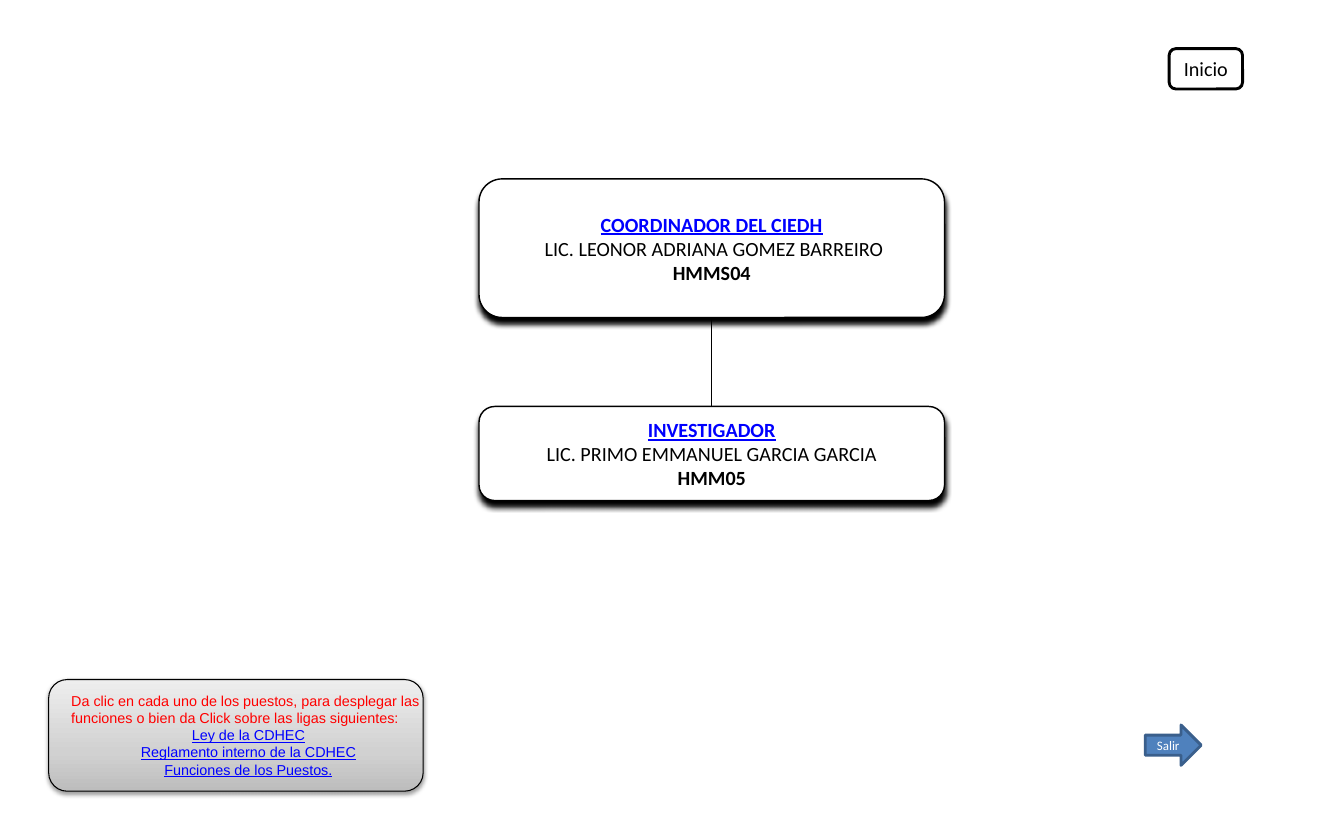
from lxml.etree import SubElement
from pptx import Presentation
from pptx.dml.color import RGBColor
from pptx.enum.shapes import MSO_CONNECTOR, MSO_SHAPE
from pptx.enum.text import MSO_ANCHOR, PP_ALIGN
from pptx.oxml.ns import qn
from pptx.util import Inches, Pt

BLACK, WHITE, RED, LINK = "000000", "FFFFFF", "FF0000", "0000FF"
BLUE, DARK_BLUE = "4F81BD", "3A5F8C"
GRAY_STOPS = [(0, "BDBDBD"), (35, "D1D1D1"), (100, "EEEEEE")]


def color(value):
    return RGBColor.from_string(value)


def add_box(page, kind, box, fill, line, width):
    shape = page.shapes.add_shape(kind, *(Inches(length) for length in box))
    shape.shadow.inherit = False
    shape.fill.solid()
    shape.fill.fore_color.rgb = color(fill)
    shape.line.color.rgb = color(line)
    shape.line.width = Pt(width)
    return shape


def add_shadow(shape, opacity, blur, distance):
    effects = shape.element.spPr.find(qn("a:effectLst"))
    shadow = SubElement(effects, qn("a:outerShdw"), blurRad=str(Pt(blur)),
                        dist=str(Pt(distance)), dir="5400000", rotWithShape="0")
    tone = SubElement(shadow, qn("a:srgbClr"), val=BLACK)
    SubElement(tone, qn("a:alpha"), val=str(opacity * 1000))


def fill_gradient(shape, stops):
    shape.fill.gradient()
    shape.fill.gradient_angle = 90
    stop_list = shape.element.spPr.find(qn("a:gradFill")).find(qn("a:gsLst"))
    for old_stop in list(stop_list):
        stop_list.remove(old_stop)
    for position, tone in stops:
        stop = SubElement(stop_list, qn("a:gs"), pos=str(position * 1000))
        SubElement(stop, qn("a:srgbClr"), val=tone)


def write_lines(frame, lines, font, size):
    """Each line is (text, colour, bold, underlined, alignment)."""
    for index, (text, tone, bold, underline, align) in enumerate(lines):
        para = frame.paragraphs[0] if index == 0 else frame.add_paragraph()
        para.text = text
        para.alignment = align
        para.font.name = font
        para.font.size = Pt(size)
        para.font.bold = bold
        para.font.underline = underline
        para.font.color.rgb = color(tone)


def add_position(page, box, title, person, code):
    card = add_box(page, MSO_SHAPE.ROUNDED_RECTANGLE, box, WHITE, BLACK, 1)
    add_shadow(card, 100, 4, 4)
    frame = card.text_frame
    frame.word_wrap = False
    frame.vertical_anchor = MSO_ANCHOR.MIDDLE
    frame.margin_left = frame.margin_right = Inches(0.17)
    frame.margin_top = frame.margin_bottom = Inches(0.09)
    write_lines(frame, [(title, LINK, True, True, PP_ALIGN.CENTER),
                        (person, BLACK, False, False, PP_ALIGN.CENTER),
                        (code, BLACK, True, False, PP_ALIGN.CENTER)], "Calibri", 14)


def add_chart_of_posts(page, left, top, width):
    center = left + width / 2
    add_position(page, (left, top, width, 1.34), "COORDINADOR DEL CIEDH",
                 " LIC. LEONOR ADRIANA GOMEZ BARREIRO", "HMMS04")
    add_position(page, (left, top + 2.2, width, 0.91), "INVESTIGADOR",
                 "LIC. PRIMO EMMANUEL GARCIA GARCIA", "HMM05")
    link = page.shapes.add_connector(
        MSO_CONNECTOR.STRAIGHT, Inches(center), Inches(top + 1.34),
        Inches(center), Inches(top + 2.2))
    link.line.color.rgb = color(BLACK)
    link.line.width = Pt(0.75)
    SubElement(link.element.spPr, qn("a:effectLst"))


def add_button(page, kind, box, label, size, fill, line, tone):
    button = add_box(page, kind, box, fill, line, 2)
    button.text_frame.vertical_anchor = MSO_ANCHOR.MIDDLE
    write_lines(button.text_frame, [(label, tone, False, False, PP_ALIGN.CENTER)],
                "Calibri", size)


def add_help(page, left, top, width, height):
    panel = add_box(page, MSO_SHAPE.ROUNDED_RECTANGLE, (left, top, width, height),
                    WHITE, BLACK, 0.75)
    fill_gradient(panel, GRAY_STOPS)
    add_shadow(panel, 38, 3.1, 1.6)

    note = page.shapes.add_textbox(Inches(left + 0.12), Inches(top + 0.07),
                                   Inches(width), Inches(height - 0.14))
    note.text_frame.word_wrap = True
    lines = [("Da clic en cada uno de los puestos, para desplegar las funciones "
              "o bien da Click sobre las ligas siguientes:",
              RED, False, False, PP_ALIGN.LEFT)]
    for name in ("Ley de la CDHEC", "Reglamento interno de la CDHEC",
                 "Funciones de los Puestos."):
        lines.append((name, LINK, False, True, PP_ALIGN.CENTER))
    write_lines(note.text_frame, lines, "Arial", 10)


def main():
    deck = Presentation()
    deck.slide_width, deck.slide_height = Inches(12.99), Inches(7.88)
    page = deck.slides.add_slide(deck.slide_layouts[6])

    # Organisation chart
    add_chart_of_posts(page, 4.63, 1.73, 4.5)

    # Instructions
    add_help(page, 0.47, 6.57, 3.62, 1.08)

    # Navigation
    add_button(page, MSO_SHAPE.ROUNDED_RECTANGLE, (11.3, 0.47, 0.71, 0.39),
               "Inicio", 14, WHITE, BLACK, BLACK)
    add_button(page, MSO_SHAPE.RIGHT_ARROW, (11.07, 7.01, 0.54, 0.39),
               "Salir", 9, BLUE, DARK_BLUE, WHITE)

    deck.save("out.pptx")


if __name__ == "__main__":
    main()
